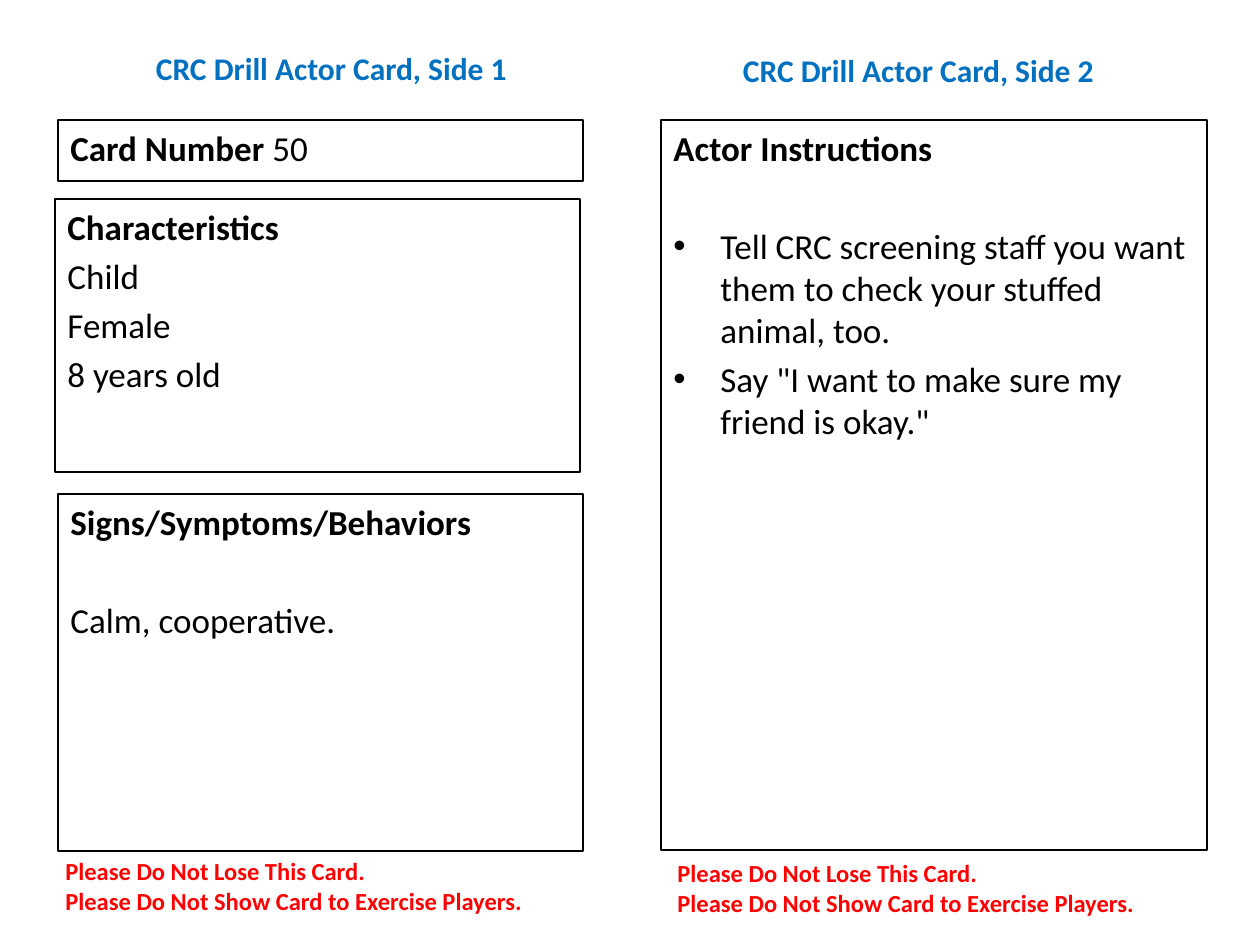
"""Build a two-sided drill actor card slide."""
from typing import NamedTuple

from lxml import etree
from pptx import Presentation
from pptx.dml.color import RGBColor
from pptx.enum.shapes import MSO_SHAPE
from pptx.enum.text import MSO_ANCHOR, MSO_AUTO_SIZE, PP_ALIGN
from pptx.oxml.ns import qn
from pptx.util import Emu, Pt

RECT = MSO_SHAPE.RECTANGLE
TOP, MIDDLE = MSO_ANCHOR.TOP, MSO_ANCHOR.MIDDLE
LEFT, CENTER = PP_ALIGN.LEFT, PP_ALIGN.CENTER
GROW = MSO_AUTO_SIZE.SHAPE_TO_FIT_TEXT

BLACK = RGBColor(0x00, 0x00, 0x00)
BLUE = RGBColor(0x00, 0x70, 0xC0)
RED = RGBColor(0xFF, 0x00, 0x00)

FONT = "Calibri"
SCALE = 914400 / 126
GAP, SKIP = 4, 32
INDENT = 47


class Run(NamedTuple):
    text: str
    bold: bool = False


class Para(NamedTuple):
    runs: list[Run]
    space: int = GAP
    bullet: bool = False


class Area(NamedTuple):
    left: int
    top: int
    width: int
    height: int


class Panel(NamedTuple):
    area: Area
    paras: list[Para]


def px(count: int) -> Emu:
    """Turn px into EMU."""
    return Emu(round(count * SCALE))


def head(text: str) -> Para:
    """Make a bold heading paragraph."""
    return Para([Run(text, True)])


def add_bullet(para) -> None:
    """Give a paragraph a round bullet with a hanging indent."""
    props = para._p.get_or_add_pPr()
    props.set("marL", str(px(INDENT)))
    props.set("indent", str(-px(INDENT)))
    etree.SubElement(props, qn("a:buFont")).set("typeface", "Arial")
    etree.SubElement(props, qn("a:buChar")).set("char", "•")


def fill_text(frame, paras: list[Para], size: int, color: RGBColor,
              align=LEFT, anchor=TOP) -> None:
    """Write paragraphs into a text frame, run by run."""
    frame.word_wrap = True
    frame.vertical_anchor = anchor
    for pos, item in enumerate(paras):
        para = frame.add_paragraph() if pos else frame.paragraphs[0]
        para.alignment = align
        para.space_before = Pt(item.space)
        if item.bullet:
            add_bullet(para)
        for part in item.runs:
            run = para.add_run()
            run.text = part.text
            font = run.font
            font.name, font.size, font.bold = FONT, Pt(size), part.bold
            font.color.rgb = color


def add_panel(slide, panel: Panel) -> None:
    """Draw an outlined panel with its text."""
    shape = slide.shapes.add_shape(RECT, *map(px, panel.area))
    shape.shadow.inherit = False
    shape.fill.background()
    shape.line.color.rgb = BLACK
    shape.line.width = Pt(0.75)
    fill_text(shape.text_frame, panel.paras, 20, BLACK)


def add_title(slide, area: Area, text: str) -> None:
    """Write the title of one card side."""
    box = slide.shapes.add_textbox(*map(px, area))
    fill_text(box.text_frame, [Para([Run(text, True)], 0)], 18, BLUE, CENTER, MIDDLE)


def add_note(slide, area: Area) -> None:
    """Write the warning below one card side."""
    box = slide.shapes.add_textbox(*map(px, area))
    paras = [Para([Run(text, True)], 0) for text in WARNING]
    fill_text(box.text_frame, paras, 14, RED)
    box.text_frame.auto_size = GROW


WARNING = ["Please Do Not Lose This Card.",
           "Please Do Not Show Card to Exercise Players."]
TITLES = [Area(53, 19, 557, 98), Area(640, 21, 557, 98)]
NOTES = [Area(53, 850, 530, 72), Area(665, 852, 530, 72)]
PANELS = [
    Panel(Area(58, 120, 525, 61),
          [Para([Run("Card Number ", True), Run("50")])]),
    Panel(Area(55, 199, 525, 273),
          [head("Characteristics")]
          + [Para([Run(text)]) for text in ("Child", "Female", "8 years old")]),
    Panel(Area(58, 494, 525, 357),
          [head("Signs/Symptoms/Behaviors"),
           Para([Run("Calm, cooperative.")], SKIP)]),
    Panel(Area(661, 120, 546, 730),
          [head("Actor Instructions"),
           Para([Run("Tell CRC screening staff you want them to check "
                     "your stuffed animal, too.")], SKIP, True),
           Para([Run('Say "I want to make sure my friend is okay."')], GAP, True)]),
]


def main() -> None:
    """Build and save the slide."""
    deck = Presentation()
    deck.slide_width, deck.slide_height = px(1260), px(945)
    slide = deck.slides.add_slide(deck.slide_layouts[6])
    for side, area in enumerate(TITLES, 1):
        add_title(slide, area, f"CRC Drill Actor Card, Side {side}")
    for panel in PANELS:
        add_panel(slide, panel)
    for area in NOTES:
        add_note(slide, area)
    deck.save("out.pptx")


if __name__ == "__main__":
    main()
